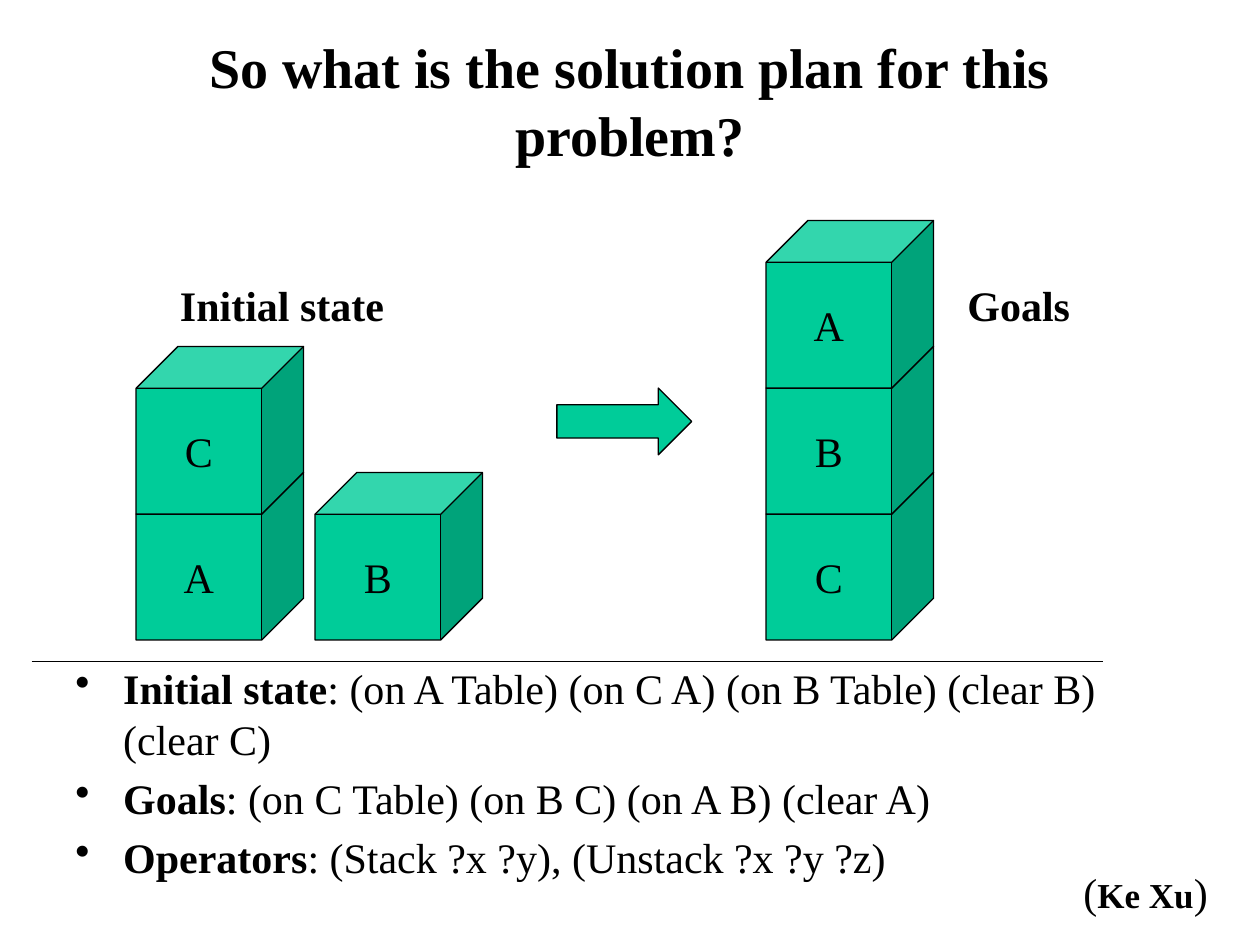
"""Build the block-stacking planning problem slide."""
from dataclasses import dataclass

from lxml.etree import SubElement
from pptx import Presentation
from pptx.dml.color import RGBColor
from pptx.enum.shapes import MSO_CONNECTOR, MSO_SHAPE
from pptx.enum.text import MSO_ANCHOR, PP_ALIGN
from pptx.oxml.ns import qn
from pptx.util import Inches, Pt


@dataclass(frozen=True)
class Theme:
    font: str = "Times New Roman"
    ink: RGBColor = RGBColor(0x00, 0x00, 0x00)
    block: RGBColor = RGBColor(0x00, 0xCC, 0x99)
    title: Pt = Pt(32)
    body: Pt = Pt(24)
    credit: Pt = Pt(20)
    outline: Pt = Pt(0.75)
    bullet_gap: Pt = Pt(5)


THEME = Theme()
FLOOR_TOP = 3.75
BLOCK_STEP = 1
BLOCK_SIZE = 1.33
STACKS = ((1.08, "AC"), (2.5, "B"), (6.08, "CBA"))
FACTS = (
    ("Initial state", ": (on A Table) (on C A) (on B Table) (clear B) (clear C)"),
    ("Goals", ": (on C Table) (on B C) (on A B) (clear A)"),
    ("Operators", ": (Stack ?x ?y), (Unstack ?x ?y ?z)"),
)


def add_run(paragraph, words, size=THEME.body, bold=False):
    run = paragraph.add_run()
    run.text = words
    run.font.name = THEME.font
    run.font.size = size
    run.font.bold = bold
    run.font.color.rgb = THEME.ink


def add_text(slide, left, top, width, height, wrap=True):
    frame = slide.shapes.add_textbox(
        Inches(left), Inches(top), Inches(width), Inches(height)
    ).text_frame
    frame.word_wrap = wrap
    return frame


def add_title(slide, words):
    frame = add_text(slide, 0.75, 0.17, 8.5, 1.25)
    frame.vertical_anchor = MSO_ANCHOR.MIDDLE
    heading = frame.paragraphs[0]
    heading.alignment = PP_ALIGN.CENTER
    add_run(heading, words, THEME.title, bold=True)


def add_label(slide, words, left, width):
    frame = add_text(slide, left, 2.17, width, 0.5)
    add_run(frame.paragraphs[0], words, bold=True)


def add_solid(slide, kind, left, top, width, height):
    solid = slide.shapes.add_shape(
        kind, Inches(left), Inches(top), Inches(width), Inches(height)
    )
    solid.shadow.inherit = False
    solid.fill.solid()
    solid.fill.fore_color.rgb = THEME.block
    solid.line.color.rgb = THEME.ink
    solid.line.width = THEME.outline
    return solid


def add_stack(slide, left, letters):
    for level, letter in enumerate(letters):
        top = FLOOR_TOP - level * BLOCK_STEP
        block = add_solid(slide, MSO_SHAPE.CUBE, left, top, BLOCK_SIZE, BLOCK_SIZE)
        frame = block.text_frame
        frame.word_wrap = False
        frame.vertical_anchor = MSO_ANCHOR.MIDDLE
        frame.paragraphs[0].alignment = PP_ALIGN.CENTER
        add_run(frame.paragraphs[0], letter)


def add_table_line(slide):
    table_line = slide.shapes.add_connector(
        MSO_CONNECTOR.STRAIGHT, Inches(0.25), Inches(5.25), Inches(8.75), Inches(5.25)
    )
    table_line.line.color.rgb = THEME.ink
    table_line.line.width = THEME.outline
    SubElement(table_line._element.spPr, qn("a:effectLst"))


def set_bullet(paragraph):
    properties = paragraph._p.get_or_add_pPr()
    properties.set("marL", str(Inches(0.38)))
    properties.set("indent", str(-Inches(0.38)))
    SubElement(properties, qn("a:buChar")).set("char", "•")


def add_facts(slide):
    frame = add_text(slide, 0.5, 5.21, 8.5, 1.85)
    for index, (term, detail) in enumerate(FACTS):
        fact = frame.add_paragraph() if index else frame.paragraphs[0]
        fact.space_before = THEME.bullet_gap if index else Pt(0)
        set_bullet(fact)
        add_run(fact, term, bold=True)
        add_run(fact, detail)


def add_credit(slide, author):
    credit = add_text(slide, 8.5, 6.83, 1.19, 0.5, wrap=False).paragraphs[0]
    add_run(credit, "(")
    add_run(credit, author, THEME.credit, bold=True)
    add_run(credit, ")")


def main():
    deck = Presentation()
    deck.slide_width, deck.slide_height = Inches(10), Inches(7.5)
    slide = deck.slides.add_slide(deck.slide_layouts[6])
    add_title(slide, "So what is the solution plan for this problem?")
    add_facts(slide)
    for left, letters in STACKS:
        add_stack(slide, left, letters)
    add_table_line(slide)
    add_solid(slide, MSO_SHAPE.RIGHT_ARROW, 4.42, 3.08, 1.07, 0.53)
    add_label(slide, "Initial state", 1.33, 2.08)
    add_label(slide, "Goals", 7.58, 1.5)
    add_credit(slide, "Ke Xu")
    deck.save("out.pptx")


if __name__ == "__main__":
    main()
